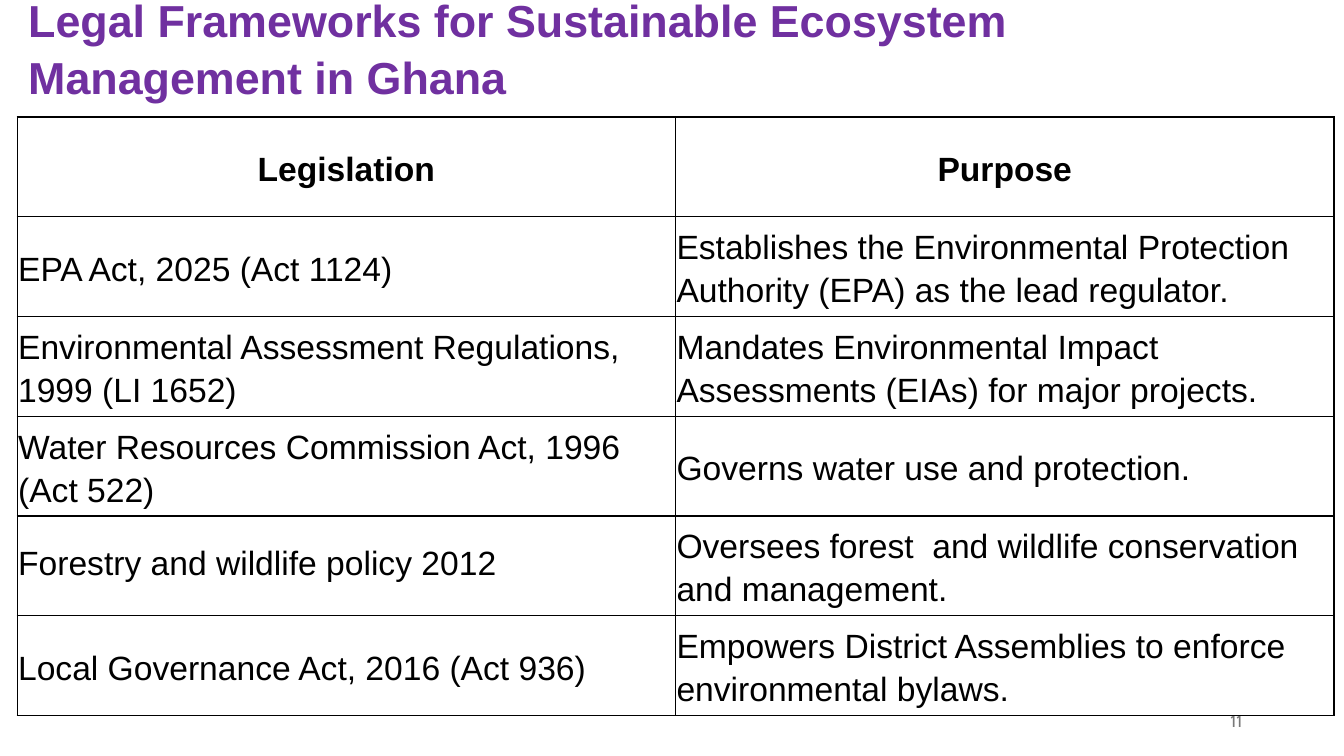
import dataclasses
import pptx
import pptx.dml.color
import pptx.enum.text
import pptx.oxml
import pptx.oxml.ns
import pptx.util

Inches = pptx.util.Inches
Pt = pptx.util.Pt
PP_ALIGN = pptx.enum.text.PP_ALIGN
MIDDLE = pptx.enum.text.MSO_ANCHOR.MIDDLE

PURPLE = pptx.dml.color.RGBColor(0x70, 0x30, 0xA0)
BLACK = pptx.dml.color.RGBColor(0, 0, 0)
GRAY = pptx.dml.color.RGBColor(0x79, 0x79, 0x79)

TITLE_FONT = {"name": "Arial", "size": Pt(32), "bold": True}
HEAD_FONT = {"name": "Arial", "size": Pt(24), "bold": True}
BODY_FONT = {"name": "Arial", "size": Pt(24), "bold": False}
NUMBER_FONT = {"name": "Cabin", "size": Pt(12)}
HEAD_PARA = {"alignment": PP_ALIGN.CENTER, "line_spacing": 1.15, "space_after": Pt(8)}
BODY_PARA = {"alignment": PP_ALIGN.LEFT, "line_spacing": 1.15, "space_after": Pt(8)}
FIRST_PARA = BODY_PARA | {"space_before": Pt(10)}
POLICY_PARA = {"alignment": PP_ALIGN.LEFT, "line_spacing": 0.9, "space_before": Pt(10)}
CELL_FORMAT = {
    "vertical_anchor": MIDDLE,
    "margin_left": Inches(0.01),
    "margin_right": Inches(0.01),
    "margin_top": Inches(0.01),
    "margin_bottom": Inches(0.01),
}


@dataclasses.dataclass
class Law:
    legislation: str
    purpose: str
    font: dict = dataclasses.field(default_factory=lambda: BODY_FONT)
    left_para: dict = dataclasses.field(default_factory=lambda: BODY_PARA)
    right_para: dict = dataclasses.field(default_factory=lambda: BODY_PARA)


LAWS = [
    Law("Legislation", "Purpose", HEAD_FONT, HEAD_PARA, HEAD_PARA),
    Law("EPA Act, 2025 (Act 1124)",
        "Establishes the Environmental Protection Authority (EPA) as the lead regulator.",
        left_para=FIRST_PARA),
    Law("Environmental Assessment Regulations, 1999 (LI 1652)",
        "Mandates Environmental Impact Assessments (EIAs) for major projects."),
    Law("Water Resources Commission Act, 1996 (Act 522)",
        "Governs water use and protection."),
    Law("Forestry and wildlife policy 2012",
        "Oversees forest  and wildlife conservation and management.",
        left_para=POLICY_PARA),
    Law("Local Governance Act, 2016 (Act 936)",
        "Empowers District Assemblies to enforce environmental bylaws."),
]


def apply(obj: object, values: dict) -> None:
    for name, value in values.items():
        setattr(obj, name, value)


def write(tf, text: str, font: dict, color: pptx.dml.color.RGBColor, para: dict) -> None:
    p = tf.paragraphs[0]
    apply(p, para)
    r = p.add_run()
    r.text = text
    apply(r.font, font)
    r.font.color.rgb = color


def add_borders(cell) -> None:
    tcPr = cell._tc.get_or_add_tcPr()
    for i, side in enumerate(("lnL", "lnR", "lnT", "lnB")):
        ln = pptx.oxml.parse_xml(
            f'<a:{side} {pptx.oxml.ns.nsdecls("a")} w="{Pt(1)}">'
            f'<a:solidFill><a:srgbClr val="{BLACK}"/></a:solidFill></a:{side}>'
        )
        tcPr.insert(i, ln)


def add_title(slide) -> None:
    sp = slide.shapes.title
    apply(sp, {"left": Inches(0.18), "top": Inches(0.4),
               "width": Inches(12.23), "height": Inches(0.58)})
    tf = sp.text_frame
    apply(tf, {"word_wrap": True, "vertical_anchor": MIDDLE,
               "auto_size": pptx.enum.text.MSO_AUTO_SIZE.NONE,
               "margin_bottom": Inches(0.5)})
    write(tf, "Legal Frameworks for Sustainable Ecosystem Management in Ghana",
          TITLE_FONT, PURPLE, {"alignment": PP_ALIGN.LEFT, "line_spacing": 1.05})


def add_number(slide) -> None:
    sp = slide.shapes.add_textbox(Inches(9.42), Inches(6.95), Inches(3), Inches(0.4))
    tf = sp.text_frame
    apply(tf, {"word_wrap": True, "vertical_anchor": MIDDLE})
    write(tf, "11", NUMBER_FONT, GRAY, {"alignment": PP_ALIGN.RIGHT})


def add_laws(slide, laws: list[Law]) -> None:
    table = slide.shapes.add_table(
        len(laws), 2, Inches(0.17), Inches(1.16), Inches(13.06), Inches(5.94)
    ).table
    apply(table, {"first_row": False, "horz_banding": False})
    for row, law in zip(table.rows, laws):
        texts = ((law.legislation, law.left_para), (law.purpose, law.right_para))
        for cell, (text, para) in zip(row.cells, texts):
            apply(cell, CELL_FORMAT)
            cell.fill.background()
            add_borders(cell)
            write(cell.text_frame, text, law.font, BLACK, para)


def main() -> None:
    prs = pptx.Presentation()
    apply(prs, {"slide_width": Inches(13.33), "slide_height": Inches(7.5)})
    slide = prs.slides.add_slide(prs.slide_layouts[5])
    add_title(slide)
    add_number(slide)
    add_laws(slide, LAWS)
    prs.save("out.pptx")


if __name__ == "__main__":
    main()
